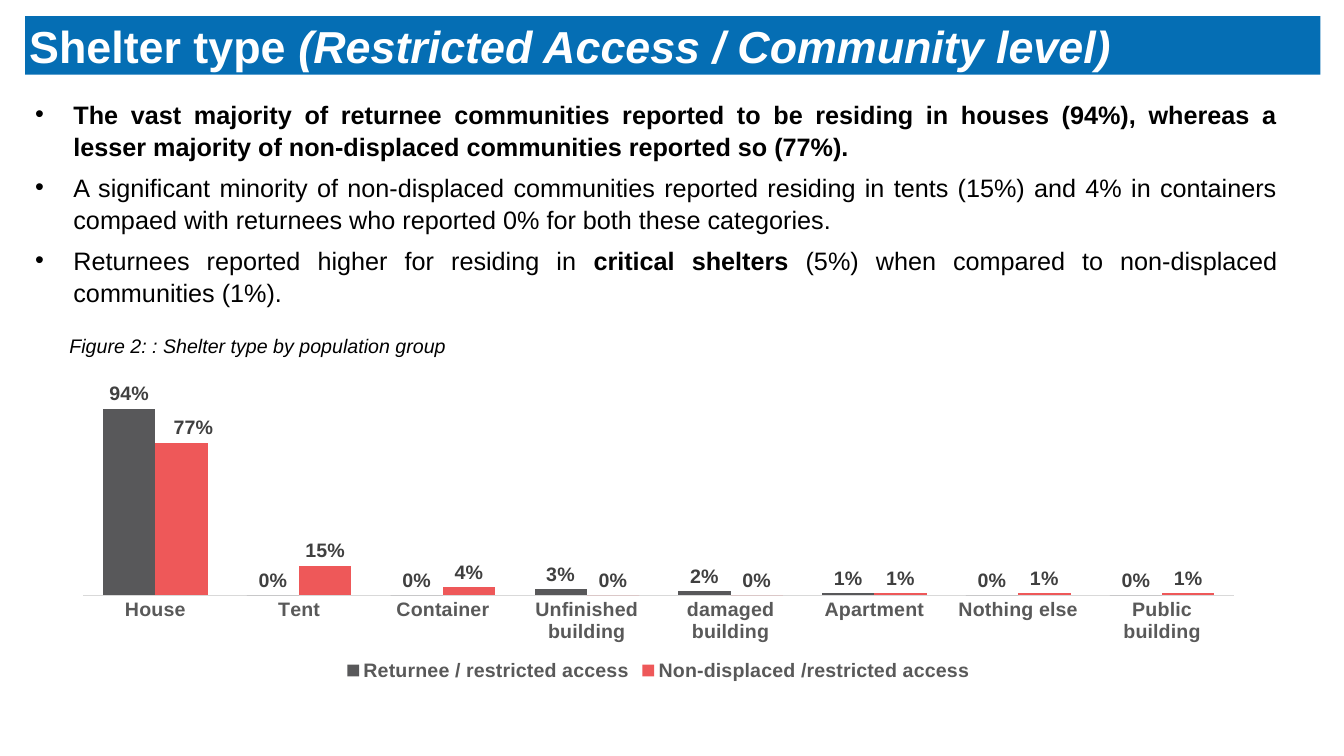
"""Build the shelter type slide with its findings and column chart."""
from lxml import etree
from pptx import Presentation, util as u
from pptx.chart.data import CategoryChartData
from pptx.dml.color import RGBColor
from pptx.enum import chart as charts, shapes, text
from pptx.oxml.ns import qn

WHITE = RGBColor(0xFF, 0xFF, 0xFF)
BLACK = RGBColor(0, 0, 0)
BLUE = RGBColor(0x05, 0x6E, 0xB4)
CHARCOAL = RGBColor(0x58, 0x58, 0x5A)
CORAL = RGBColor(0xEE, 0x58, 0x59)
LABEL_GREY = RGBColor(0x40, 0x40, 0x40)
AXIS_GREY = RGBColor(0x59, 0x59, 0x59)
LINE_GREY = RGBColor(0xD9, 0xD9, 0xD9)

FONT = "Arial"
PERCENT = "###0%"
CELL = u.Inches(0.1)
COLUMNS, ROWS = 133.33, 75

FINDINGS = [
    [("The vast majority of returnee communities reported to be residing in houses (94%), "
      "whereas a lesser majority of non-displaced communities reported so (77%).", True)],
    [("A significant minority of non-displaced communities reported residing in tents (15%) "
      "and 4% in containers compaed with returnees who reported 0% for both these categories. ",
      False)],
    [("Returnees reported higher for residing in ", False), ("critical shelters ", True),
     ("(5%) when compared to non-displaced communities (1%).", False)],
]
SHELTERS = ["House", "Tent", "Container", "Unfinished building", "damaged building",
            "Apartment", "Nothing else", "Public building"]
GROUPS = [
    ("Returnee / restricted access", CHARCOAL, [0.94, 0, 0, 0.03, 0.02, 0.01, 0, 0]),
    ("Non-displaced /restricted access", CORAL, [0.77, 0.15, 0.04, 0, 0, 0.01, 0.01, 0.01]),
]


def grid(*cells):
    """Turn grid columns and rows into lengths."""
    return [round(cell * CELL) for cell in cells]


def style(font, size, color, bold=False, italic=False):
    """Set every property of a font."""
    font.name, font.size, font.color.rgb = FONT, u.Pt(size), color
    font.bold, font.italic = bold, italic


def add_span(para, words, **look):
    """Add one run of formatted text."""
    span = para.add_run()
    span.text = words
    style(span.font, **look)


def indent(para, left, hanging):
    """Give a paragraph a hanging indent in inches."""
    props = para._p.get_or_add_pPr()
    props.set("marL", str(u.Inches(left)))
    props.set("indent", str(-u.Inches(hanging)))
    return props


def add_banner(page):
    """Add the blue title bar."""
    box = page.shapes.add_shape(shapes.MSO_SHAPE.RECTANGLE, *grid(2.5, 1.6, 128.5, 5.8))
    box.shadow.inherit = False
    box.fill.solid()
    box.fill.fore_color.rgb = BLUE
    box.line.fill.background()
    frame = box.text_frame
    frame.margin_left = frame.margin_right = frame.margin_top = frame.margin_bottom = 0
    frame.word_wrap = False
    frame.vertical_anchor = text.MSO_ANCHOR.MIDDLE
    para = frame.paragraphs[0]
    para.alignment = text.PP_ALIGN.LEFT
    para.space_before = u.Pt(8)
    indent(para, 0.42, 0.38)
    add_span(para, "Shelter type ", size=32, color=WHITE, bold=True)
    add_span(para, "(Restricted Access / Community level)",
             size=32, color=WHITE, bold=True, italic=True)


def add_text(page, cells):
    """Add a wrapping text box and return its frame."""
    frame = page.shapes.add_textbox(*grid(*cells)).text_frame
    frame.word_wrap = True
    return frame


def add_findings(page):
    """Add the justified bullet list."""
    frame = add_text(page, (2.5, 6, 125.2, 36.8))
    frame.margin_top = u.Inches(0.36)
    for index, spans in enumerate(FINDINGS):
        para = frame.add_paragraph() if index else frame.paragraphs[0]
        para.alignment = text.PP_ALIGN.JUSTIFY
        para.line_spacing = 1.07
        para.space_after = u.Pt(6)
        props = indent(para, 0.38, 0.38)
        etree.SubElement(props, qn("a:buFont"), typeface=FONT)
        etree.SubElement(props, qn("a:buChar"), char="•")
        for words, bold in spans:
            add_span(para, words, size=18, color=BLACK, bold=bold)


def add_caption(page):
    """Add the figure caption."""
    para = add_text(page, (5.9, 32.6, 122.6, 3.4)).paragraphs[0]
    para.alignment = text.PP_ALIGN.JUSTIFY
    add_span(para, "Figure 2: : Shelter type by population group",
             size=14, color=BLACK, italic=True)


def make_layout(**settings):
    """Build a manual chart layout from shares of the chart."""
    layout = etree.Element(qn("c:layout"))
    manual = etree.SubElement(layout, qn("c:manualLayout"))
    for name, value in settings.items():
        etree.SubElement(manual, qn("c:" + name), val=str(value))
    return layout


def style_series(series, color):
    """Colour one series and label its columns."""
    series.format.fill.solid()
    series.format.fill.fore_color.rgb = color
    series.invert_if_negative = False
    labels = series.data_labels
    labels.show_value = True
    labels.number_format, labels.number_format_is_linked = PERCENT, False
    labels.position = charts.XL_LABEL_POSITION.OUTSIDE_END
    style(labels.font, 14, LABEL_GREY, bold=True)


def nudge_label(series, index, share):
    """Move one data label to the right by a share of the chart."""
    label = series.points[index].data_label
    style(label.font, 14, LABEL_GREY, bold=True)
    label.position = charts.XL_LABEL_POSITION.OUTSIDE_END
    mark = series._element.find(".//" + qn("c:dLbl") + "/" + qn("c:idx"))
    mark.addnext(make_layout(x=share, y=0))


def add_shelter_chart(page):
    """Add the clustered columns by population group."""
    data = CategoryChartData(number_format=PERCENT)
    data.categories = SHELTERS
    for name, _, values in GROUPS:
        data.add_series(name, values)
    chart = page.shapes.add_chart(charts.XL_CHART_TYPE.COLUMN_CLUSTERED,
                                  *grid(5.9, 38, 118.9, 30), data).chart
    chart.has_title = False
    style(chart.font, 14, BLACK, bold=True)
    chart.has_legend = True
    chart.legend.position = charts.XL_LEGEND_POSITION.BOTTOM
    chart.legend.include_in_layout = False
    style(chart.legend.font, 14, AXIS_GREY, bold=True)

    axis = chart.category_axis
    axis.major_tick_mark = axis.minor_tick_mark = charts.XL_TICK_MARK.NONE
    axis.format.line.color.rgb = LINE_GREY
    axis.format.line.width = u.Pt(0.75)
    style(axis.tick_labels.font, 14, AXIS_GREY, bold=True)
    scale = chart.value_axis
    scale.visible = scale.has_major_gridlines = False
    scale.minimum_scale, scale.maximum_scale = 0, 1

    plot = chart.plots[0]
    plot.gap_width, plot.overlap, plot.vary_by_categories = 75, 0, False
    for series, (_, color, _) in zip(plot.series, GROUPS):
        style_series(series, color)
    nudge_label(plot.series[1], 0, 0.01)
    area = chart._chartSpace.chart.plotArea
    for old in area.findall(qn("c:layout")):
        area.remove(old)
    area.insert(0, make_layout(layoutTarget="inner", xMode="edge", yMode="edge",
                               x=0.02, y=0.04, w=0.96, h=0.66))


def main():
    """Build and save the deck."""
    deck = Presentation()
    deck.slide_width, deck.slide_height = grid(COLUMNS, ROWS)
    page = deck.slides.add_slide(deck.slide_layouts[6])
    add_banner(page)
    add_findings(page)
    add_caption(page)
    add_shelter_chart(page)
    deck.save("out.pptx")


if __name__ == "__main__":
    main()
